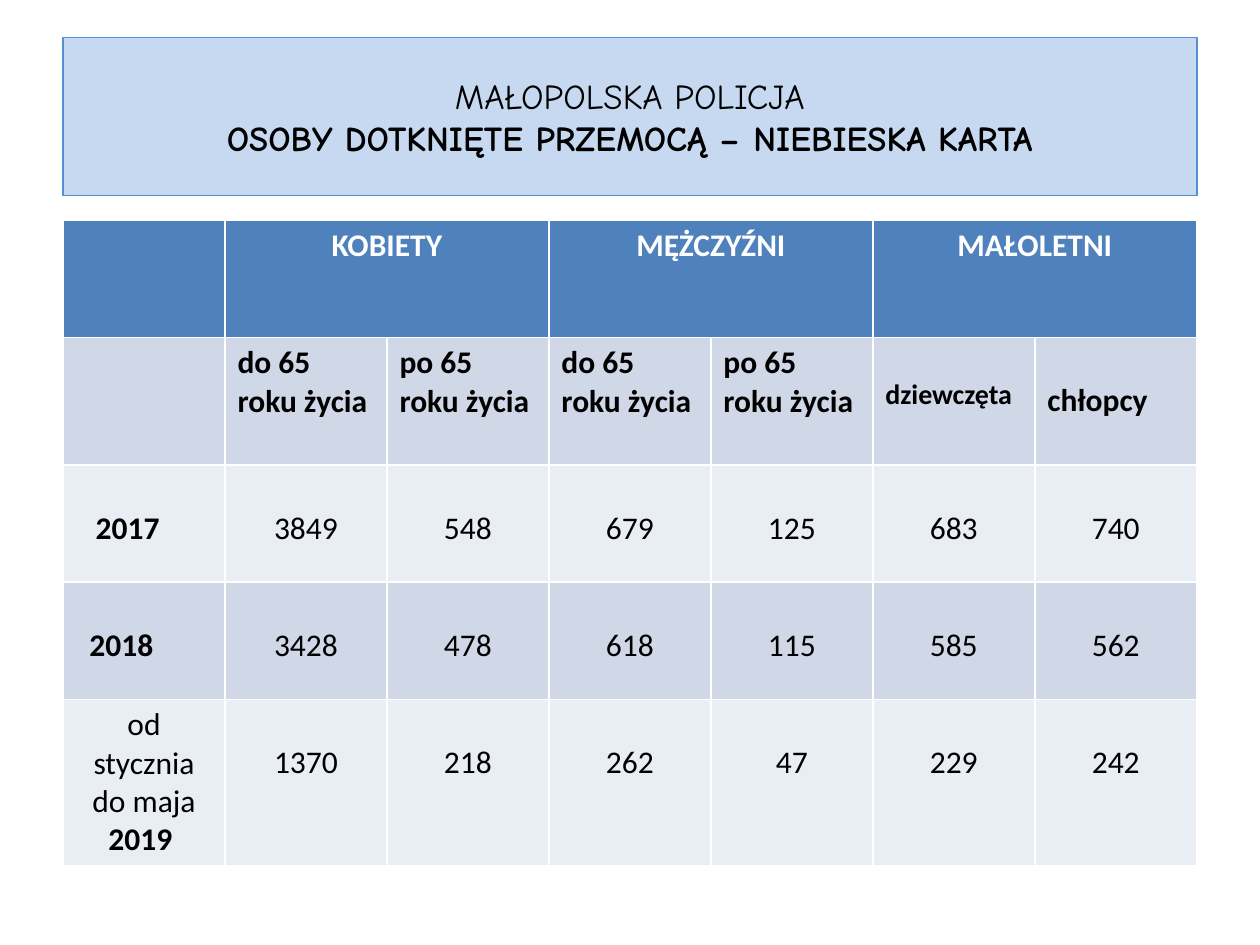
import pptx
import pptx.util
import pptx.dml.color
import pptx.enum.shapes
import pptx.enum.text

INCH = pptx.util.Inches
ALIGN = pptx.enum.text.PP_ALIGN
WIDE, HIGH = 10, 7.5
EDGE = WIDE * 0.05
SPAN = WIDE - 2 * EDGE
LINE = 0.3

TITLE = [("MAŁOPOLSKA POLICJA\n", False),
         ("OSOBY DOTKNIĘTE PRZEMOCĄ – NIEBIESKA KARTA", True)]
GROUPS = ["KOBIETY", "MĘŻCZYŹNI", "MAŁOLETNI"]
AGES = ["do 65 roku życia", "po 65 roku życia"] * 2
KIDS = [("dziewczęta", 16), ("chłopcy", 18)]
YEARS = [
    ([("2017", True)], [3849, 548, 679, 125, 683, 740]),
    ([("2018", True)], [3428, 478, 618, 115, 585, 562]),
    ([("od stycznia do maja ", False), ("2019 ", True)],
     [1370, 218, 262, 47, 229, 242]),
]
DENTS = [0.16, 0.11, None]
ROWS = [0.93, 1.01, 0.93, 0.93, 1.32]
HEAD, DARK, PALE = "4F81BD", "D0D8E8", "E9EDF4"
FILLS = [HEAD, DARK, PALE, DARK, PALE]


def tint(code):
    return pptx.dml.color.RGBColor.from_string(code)


def paint(part, code):
    part.fill.solid()
    part.fill.fore_color.rgb = tint(code)


def write(frame, runs, size=18, font="Calibri", color="000000",
          bold=False, align=ALIGN.CENTER):
    if isinstance(runs, str):
        runs = [(runs, bold)]
    para = frame.paragraphs[0]
    para.alignment = align
    for text, heavy in runs:
        run = para.add_run()
        run.text = text.rstrip("\n")
        run.font.size = pptx.util.Pt(size)
        run.font.name = font
        run.font.bold = heavy
        run.font.color.rgb = tint(color)
        if text.endswith("\n"):
            para.add_line_break()


def lower(cell, size=18):
    cell.margin_top = INCH(0.05 + LINE * size / 18)


def main():
    deck = pptx.Presentation()
    deck.slide_width, deck.slide_height = INCH(WIDE), INCH(HIGH)
    slide = deck.slides.add_slide(deck.slide_layouts[6])

    box = slide.shapes.add_shape(
        pptx.enum.shapes.MSO_SHAPE.RECTANGLE,
        INCH(EDGE), INCH(HIGH * 0.04), INCH(SPAN), INCH(HIGH / 6))
    box.shadow.inherit = False
    paint(box, "C6D9F1")
    box.line.color.rgb = tint("558ED5")
    box.line.width = pptx.util.Pt(0.75)
    box.text_frame.word_wrap = True
    box.text_frame.vertical_anchor = pptx.enum.text.MSO_ANCHOR.MIDDLE
    write(box.text_frame, TITLE, size=20, font="Comic Neue")

    cols = 1 + 2 * len(GROUPS)
    table = slide.shapes.add_table(
        len(ROWS), cols, INCH(EDGE), INCH(1.75),
        INCH(SPAN), INCH(sum(ROWS))).table
    for row, tall in enumerate(ROWS):
        table.rows[row].height = INCH(tall)
        for col in range(cols):
            paint(table.cell(row, col), FILLS[row])

    for num, name in enumerate(GROUPS):
        cell = table.cell(0, 1 + 2 * num)
        cell.merge(table.cell(0, 2 + 2 * num))
        write(cell.text_frame, name, color="FFFFFF", bold=True)

    for col, name in enumerate(AGES, 1):
        write(table.cell(1, col).text_frame, name, bold=True, align=ALIGN.LEFT)
    for col, (name, size) in enumerate(KIDS, 1 + len(AGES)):
        cell = table.cell(1, col)
        lower(cell, size)
        write(cell.text_frame, name, size=size, bold=True, align=ALIGN.LEFT)

    for row, ((year, counts), dent) in enumerate(zip(YEARS, DENTS), 2):
        cell = table.cell(row, 0)
        if dent:
            lower(cell)
            cell.margin_left = INCH(0.1 + dent)
        write(cell.text_frame, year, align=ALIGN.LEFT if dent else ALIGN.CENTER)
        for col, count in enumerate(counts, 1):
            cell = table.cell(row, col)
            lower(cell)
            write(cell.text_frame, str(count))

    deck.save("out.pptx")


if __name__ == "__main__":
    main()
